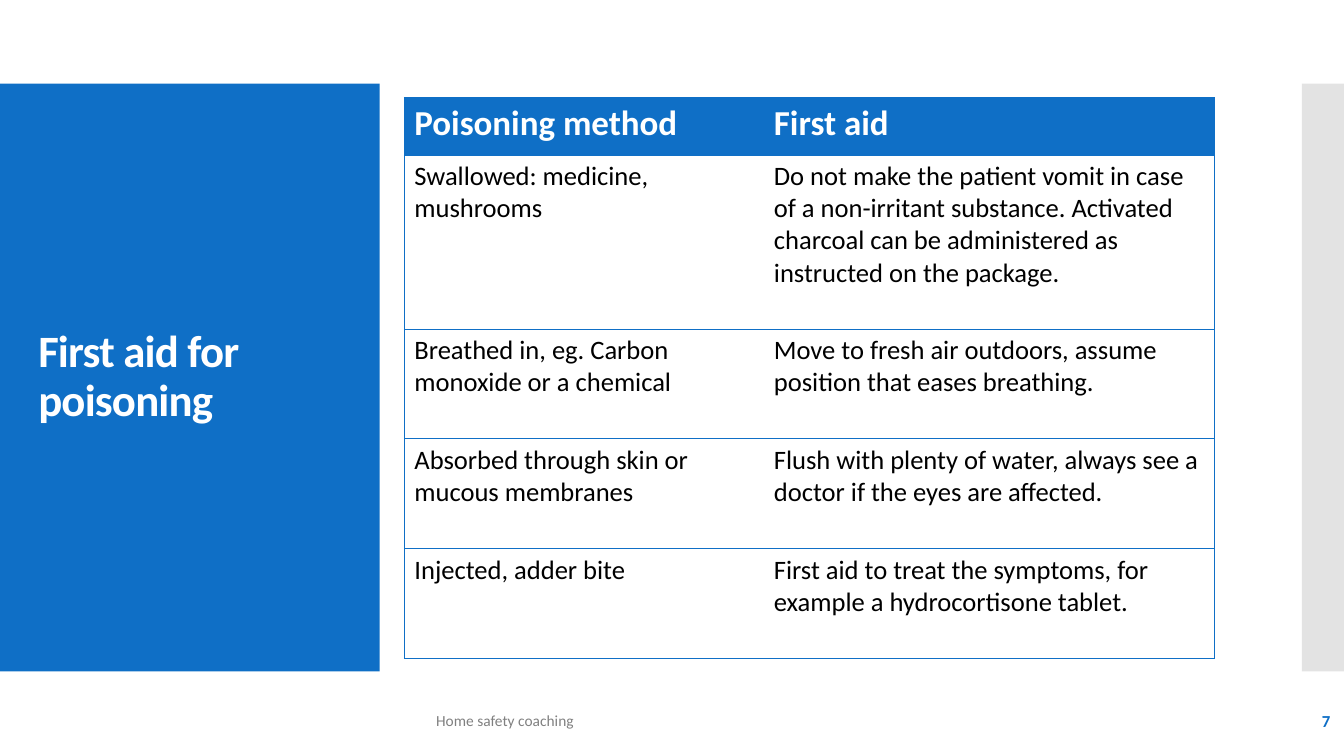
import pptx
import pptx.util
import pptx.dml.color
import pptx.enum.shapes
import pptx.enum.text
import pptx.oxml
import pptx.oxml.ns

Cm, Pt = pptx.util.Cm, pptx.util.Pt
ANCHOR, ALIGN = pptx.enum.text.MSO_ANCHOR, pptx.enum.text.PP_ALIGN

TITLE = "First aid for poisoning"
FOOTER = "Home safety coaching"
PAGE_NUMBER = "7"
ROWS = [
    ("Poisoning method", "First aid"),
    ("Swallowed: medicine, mushrooms",
     "Do not make the patient vomit in case of a non-irritant substance. "
     "Activated charcoal can be administered as instructed on the package."),
    ("Breathed in, eg. Carbon monoxide or a chemical",
     "Move to fresh air outdoors, assume position that eases breathing."),
    ("Absorbed through skin or mucous membranes",
     "Flush with plenty of water, always see a doctor if the eyes are affected."),
    ("Injected, adder bite",
     "First aid to treat the symptoms, for example a hydrocortisone tablet."),
]
COLORS = {"blue": "0F6FC6", "grey": "C8C8C8", "footer": "808080",
          "white": "FFFFFF", "black": "000000"}
FONT = "Calibri"

SLIDE_W, SLIDE_H = Cm(33.87), Cm(19.05)
BAND_TOP, BAND_H = Cm(2.11), Cm(14.81)
TITLE_PANEL_W, EDGE_W = Cm(9.57), Cm(1.06)
TABLE_LEFT, TABLE_TOP = Cm(10.19), Cm(2.46)
COL_WIDTHS = [Cm(9.06), Cm(11.35)]
ROW_HEIGHTS = [Cm(1.45), Cm(4.38)] + [Cm(2.77)] * 3
FOOTER_TOP, FOOTER_H = Cm(17.65), Cm(1.02)


def rgb(name):
    return pptx.dml.color.RGBColor.from_string(COLORS[name])


def write(tf, text, size, color, bold=False, align=ALIGN.LEFT, anchor=ANCHOR.MIDDLE):
    """Put one formatted run in a text frame and return the run."""
    tf.word_wrap = True
    tf.vertical_anchor = anchor
    p = tf.paragraphs[0]
    p.alignment = align
    r = p.add_run()
    r.text = text
    r.font.name, r.font.size, r.font.bold = FONT, Pt(size), bold
    r.font.color.rgb = rgb(color)
    return r


def add_panel(s, left, width, color):
    panel = s.shapes.add_shape(pptx.enum.shapes.MSO_SHAPE.RECTANGLE,
                               left, BAND_TOP, width, BAND_H)
    panel.shadow.inherit = False
    panel.fill.solid()
    panel.fill.fore_color.rgb = rgb(color)
    panel.line.fill.background()
    return panel


def set_borders(cell, lined_sides):
    """Draw blue lines on the given sides (of L, R, T, B) and none on the rest."""
    tc_pr = cell._tc.get_or_add_tcPr()
    for i, side in enumerate("LRTB"):
        fill = (f'<a:solidFill><a:srgbClr val="{COLORS["blue"]}"/></a:solidFill>'
                if side in lined_sides else "<a:noFill/>")
        tc_pr.insert(i, pptx.oxml.parse_xml(
            f'<a:ln{side} {pptx.oxml.ns.nsdecls("a")} w="{Pt(0.75)}">{fill}</a:ln{side}>'))


def add_title(s):
    title = s.shapes.title
    title.left, title.top, title.width, title.height = Cm(0.71), Cm(3.12), Cm(8.18), Cm(12.78)
    r = write(title.text_frame, TITLE, 32, "white", bold=True)
    r.font._element.set("spc", "-60")
    title.text_frame.paragraphs[0].line_spacing = 0.9
    title.element.getparent().append(title.element)  # bring in front of the panel


def add_first_aid_table(s):
    table = s.shapes.add_table(len(ROWS), len(COL_WIDTHS), TABLE_LEFT, TABLE_TOP,
                               sum(COL_WIDTHS), sum(ROW_HEIGHTS)).table
    table.horz_banding = False
    for column, width in zip(table.columns, COL_WIDTHS):
        column.width = width
    for i, (height, texts) in enumerate(zip(ROW_HEIGHTS, ROWS)):
        table.rows[i].height = height
        header = i == 0
        for j, text in enumerate(texts):
            cell = table.cell(i, j)
            cell.fill.solid()
            cell.fill.fore_color.rgb = rgb("blue" if header else "white")
            write(cell.text_frame, text, 25 if header else 19,
                  "white" if header else "black", bold=header, anchor=ANCHOR.TOP)
            set_borders(cell, "TB" + "LR"[j])


def add_footer_text(s, left, width, text, size, color, **fmt):
    box = s.shapes.add_textbox(left, FOOTER_TOP, width, FOOTER_H)
    write(box.text_frame, text, size, color, **fmt)


def main():
    prs = pptx.Presentation()
    prs.slide_width, prs.slide_height = SLIDE_W, SLIDE_H
    s = prs.slides.add_slide(prs.slide_layouts.get_by_name("Title Only"))
    add_panel(s, 0, TITLE_PANEL_W, "blue")
    edge = add_panel(s, SLIDE_W - EDGE_W, EDGE_W, "grey")
    edge_color = edge.element.spPr.find(".//" + pptx.oxml.ns.qn("a:srgbClr"))
    edge_color.append(pptx.oxml.parse_xml(
        f'<a:alpha {pptx.oxml.ns.nsdecls("a")} val="50000"/>'))
    add_title(s)
    add_footer_text(s, Cm(29.54), Cm(4.24), PAGE_NUMBER, 12, "blue",
                    bold=True, align=ALIGN.RIGHT)
    add_first_aid_table(s)
    add_footer_text(s, Cm(10.74), Cm(16.41), FOOTER, 11, "footer")
    prs.save("out.pptx")


if __name__ == "__main__":
    main()
